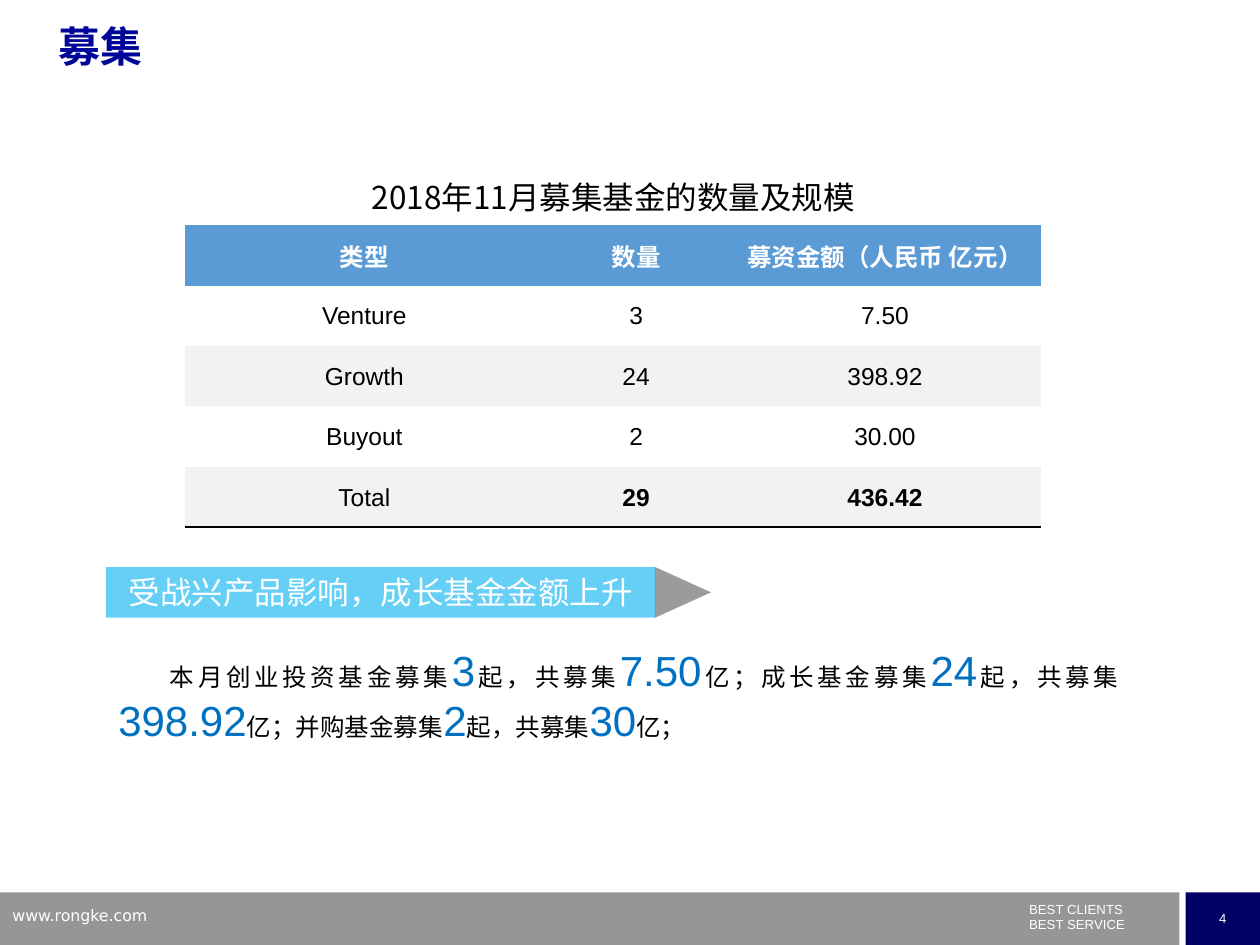
"""Build the fundraising slide: a fund table, a callout banner, a summary and a footer."""
from lxml.etree import SubElement
from pptx import Presentation
from pptx.dml.color import RGBColor
from pptx.enum.shapes import MSO_SHAPE
from pptx.enum.text import MSO_ANCHOR, PP_ALIGN
from pptx.oxml.ns import qn
from pptx.util import Pt

SANS, HAN = "Arial", "Noto Sans CJK SC"
CAPTION = "2018年11月募集基金的数量及规模"
ROWS = [
    ("类型", "数量", "募资金额（人民币 亿元）"),
    ("Venture", "3", "7.50"),
    ("Growth", "24", "398.92"),
    ("Buyout", "2", "30.00"),
    ("Total", "29", "436.42"),
]
COLS = [204.5, 106, 178.5]
ROW = 34.5
BANNER = "受战兴产品影响，成长基金金额上升"
STORY = [
    ("本月创业投资基金募集", "3"), ("起，共募集", "7.50"),
    ("亿；成长基金募集", "24"), ("起，共募集", "398.92"),
    ("亿；并购基金募集", "2"), ("起，共募集", "30"), ("亿；", ""),
]
FOOT = ["BEST CLIENTS", "BEST SERVICE"]


def tint(text):
    return RGBColor.from_string(text)


def style(run, size, color, face=SANS, bold=False, east=HAN):
    font = run.font
    font.size, font.name, font.bold = Pt(size), face, bold
    font.color.rgb = tint(color)
    SubElement(font._element, qn("a:ea"), typeface=east)


def write(frame, lines, *look, align=PP_ALIGN.LEFT, **more):
    frame.text = "\n".join(lines)
    for para in frame.paragraphs:
        para.alignment = align
        for run in para.runs:
            style(run, *look, **more)


def box(slide, *area):
    frame = slide.shapes.add_textbox(*map(Pt, area)).text_frame
    frame.word_wrap = True
    return frame


def block(slide, kind, area, color, alpha=100):
    shape = slide.shapes.add_shape(kind, *map(Pt, area))
    shape.shadow.inherit = False
    shape.line.fill.background()
    shape.fill.solid()
    shape.fill.fore_color.rgb = tint(color)
    if alpha < 100:
        node = shape._element.spPr.find(".//" + qn("a:srgbClr"))
        SubElement(node, qn("a:alpha"), val=str(alpha * 1000))
    shape.text_frame.vertical_anchor = MSO_ANCHOR.MIDDLE
    return shape


def edge(cell):
    line = SubElement(cell._tc.get_or_add_tcPr(), qn("a:lnB"), w=str(Pt(1)))
    fill = SubElement(line, qn("a:solidFill"))
    SubElement(fill, qn("a:srgbClr"), val="000000")


def fill_cell(cell, text, back, *look, **more):
    cell.margin_left = cell.margin_right = cell.margin_top = Pt(0.7)
    cell.margin_bottom = Pt(0)
    cell.vertical_anchor = MSO_ANCHOR.MIDDLE
    write(cell.text_frame, [text], *look, align=PP_ALIGN.CENTER, **more)
    if back:
        cell.fill.solid()
        cell.fill.fore_color.rgb = tint(back)
    else:
        cell.fill.background()


def add_grid(slide):
    count = len(ROWS) + 1
    area = map(Pt, (106, 94.25, sum(COLS), ROW * count))
    grid = slide.shapes.add_table(count, len(COLS), *area).table
    grid.first_row = grid.horz_banding = False
    mark = grid._tbl.tblPr.find(qn("a:tableStyleId"))
    mark.text = "{2D5ABB26-0587-4C30-8999-92F81FD0307C}"
    for col, width in zip(grid.columns, COLS):
        col.width = Pt(width)
    for row in grid.rows:
        row.height = Pt(ROW)
    grid.cell(0, 0).merge(grid.cell(0, len(COLS) - 1))
    east = "Noto Sans CJK JP"
    fill_cell(grid.cell(0, 0), CAPTION, None, 18, "000000", east, east=east)
    last = len(ROWS)
    for r, row in enumerate(ROWS, 1):
        for c, text in enumerate(row):
            cell = grid.cell(r, c)
            if r == last:
                edge(cell)
            if r == 1:
                fill_cell(cell, text, "5B9BD5", 14, "FFFFFF", HAN, True)
            else:
                back = "F2F2F2" if r % 2 else None
                bold = r == last and c > 0
                fill_cell(cell, text, back, 14, "000000", SANS, bold)


def add_story(slide):
    para = box(slide, 60.5, 364.5, 585.5, 65.5).paragraphs[0]
    para.alignment = PP_ALIGN.JUSTIFY
    para._p.get_or_add_pPr().set("indent", str(Pt(29.5)))
    for words, value in STORY:
        for text, look in ((words, (14, "000000", HAN)), (value, (24, "0070C0"))):
            if text:
                run = para.add_run()
                run.text = text
                style(run, *look)


def add_foot(slide):
    block(slide, MSO_SHAPE.RECTANGLE, (0, 510, 674, 30), "969696")
    page = block(slide, MSO_SHAPE.RECTANGLE, (677.5, 510, 42.5, 30), "000066")
    write(page.text_frame, ["4"], 7.5, "FFFFFF", align=PP_ALIGN.CENTER)
    frame = box(slide, 581, 514, 108, 21)
    frame.margin_top = Pt(0.8)
    write(frame, FOOT, 7.5, "FFFFFF")
    site = box(slide, 0, 514, 173, 18.5)
    write(site, ["www.rongke.com"], 9, "FFFFFF", "DejaVu Sans")


def add_banner(slide):
    area = (60.5, 324, 314, 29)
    bar = block(slide, MSO_SHAPE.RECTANGLE, area, "00B0F0", 60)
    bar.text_frame.word_wrap = True
    write(bar.text_frame, [BANNER], 18, "FFFFFF", HAN, align=PP_ALIGN.CENTER)
    tip = block(slide, MSO_SHAPE.ISOSCELES_TRIANGLE, (375.75, 322.5, 29, 32), "595959", 60)
    tip.rotation = 90


def main():
    deck = Presentation()
    deck.slide_width, deck.slide_height = Pt(720), Pt(540)
    slide = deck.slides.add_slide(deck.slide_layouts[6])
    add_foot(slide)
    add_story(slide)
    add_banner(slide)
    title = box(slide, 26.5, 11.5, 648, 50.5)
    write(title, ["募集"], 24, "000798", bold=True)
    title.paragraphs[0].line_spacing = 0.9
    add_grid(slide)
    deck.save("out.pptx")


if __name__ == "__main__":
    main()
